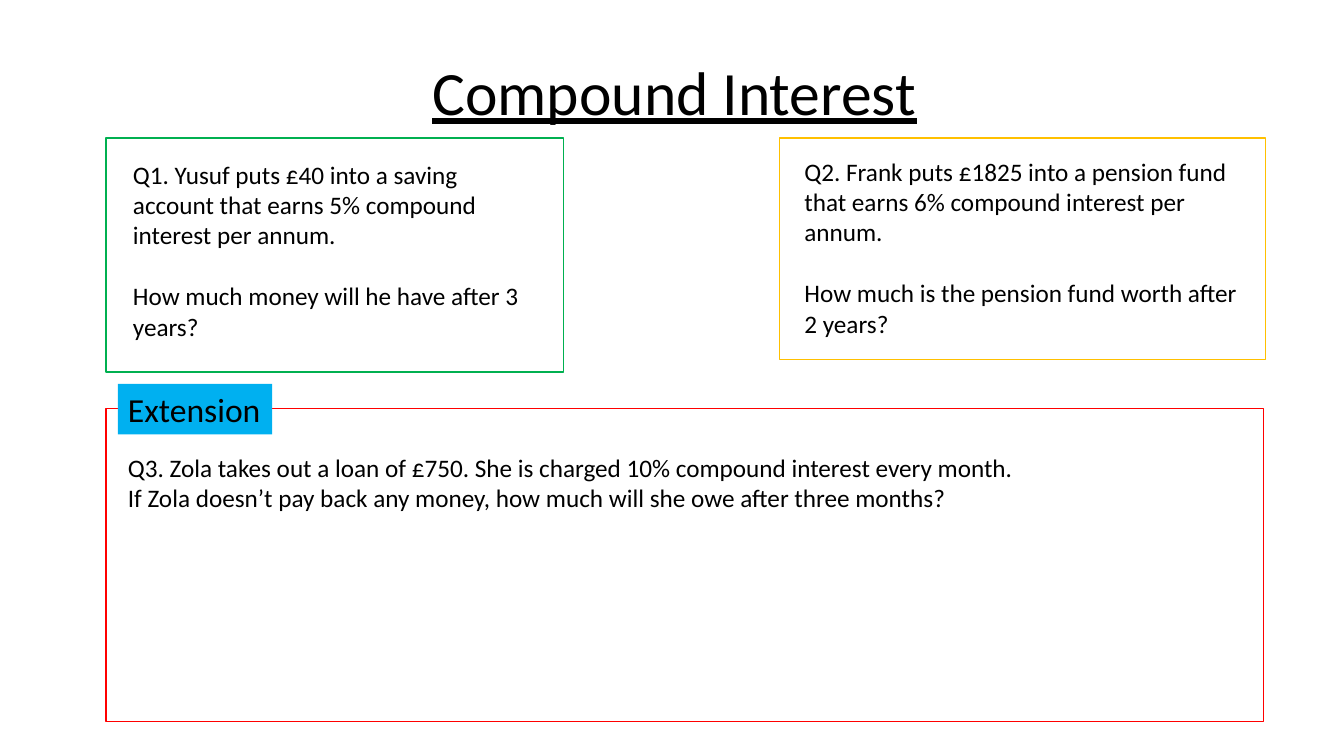
from pptx import Presentation
from pptx.dml.color import RGBColor as RGB
from pptx.enum.shapes import MSO_SHAPE as Shape
from pptx.enum.text import MSO_ANCHOR as Anchor, MSO_AUTO_SIZE as Fit, PP_ALIGN as Align
from pptx.util import Pt

PX = 9144
INK = {"black": "000000", "green": "00B050", "gold": "FFC000", "red": "FF0000", "blue": "00B0F0"}


def place(*box):
    return [n * PX for n in box]


def write(para, text, size):
    run = para.add_run()
    run.text = text
    run.font.name = "Calibri"
    run.font.size = Pt(size)
    run.font.color.rgb = RGB.from_string(INK["black"])
    return run


deck = Presentation()
deck.slide_width, deck.slide_height = place(1333, 750)
slide = deck.slides.add_slide(deck.slide_layouts[5])

title = slide.shapes.title
title.left, title.top, title.width, title.height = place(94, 45, 1150, 99)
frame = title.text_frame
frame.vertical_anchor = Anchor.MIDDLE
head = frame.paragraphs[0]
head.alignment = Align.CENTER
head.line_spacing = 0.9
write(head, "Compound Interest", 44).font.underline = True

frames = [
    ("green", (105, 137, 454, 232)),
    ("gold", (773, 137, 482, 220)),
    ("red", (105, 405, 1148, 311)),
]
for hue, box in frames:
    rect = slide.shapes.add_shape(Shape.RECTANGLE, *place(*box))
    rect.shadow.inherit = False
    rect.fill.background()
    rect.line.color.rgb = RGB.from_string(INK[hue])
    rect.line.width = Pt(1)

label = slide.shapes.add_textbox(*place(117, 381, 153, 50))
label.fill.solid()
label.fill.fore_color.rgb = RGB.from_string(INK["blue"])
label.text_frame.word_wrap = False
label.text_frame.auto_size = Fit.SHAPE_TO_FIT_TEXT
write(label.text_frame.paragraphs[0], "Extension", 24)

tasks = [
    ((122, 153, 408, 192), 22, [
        "Q1. Yusuf puts £40 into a saving account that earns 5% compound interest per annum.",
        "How much money will he have after 3 years?",
    ]),
    ((788, 150, 456, 192), 22, [
        "Q2. Frank puts £1825 into a pension fund that earns 6% compound interest per annum.",
        "How much is the pension fund worth after 2 years?",
    ]),
    ((117, 444, 1127, 71), 0, [
        "Q3. Zola takes out a loan of £750. She is charged 10% compound interest every month.",
        "If Zola doesn’t pay back any money, how much will she owe after three months?",
    ]),
]
for box, gap, lines in tasks:
    frame = slide.shapes.add_textbox(*place(*box)).text_frame
    frame.word_wrap = True
    frame.auto_size = Fit.SHAPE_TO_FIT_TEXT
    first, last = frame.paragraphs[0], frame.add_paragraph()
    last.space_before = Pt(gap)
    for para, line in zip((first, last), lines):
        write(para, line, 18)

deck.save("out.pptx")
